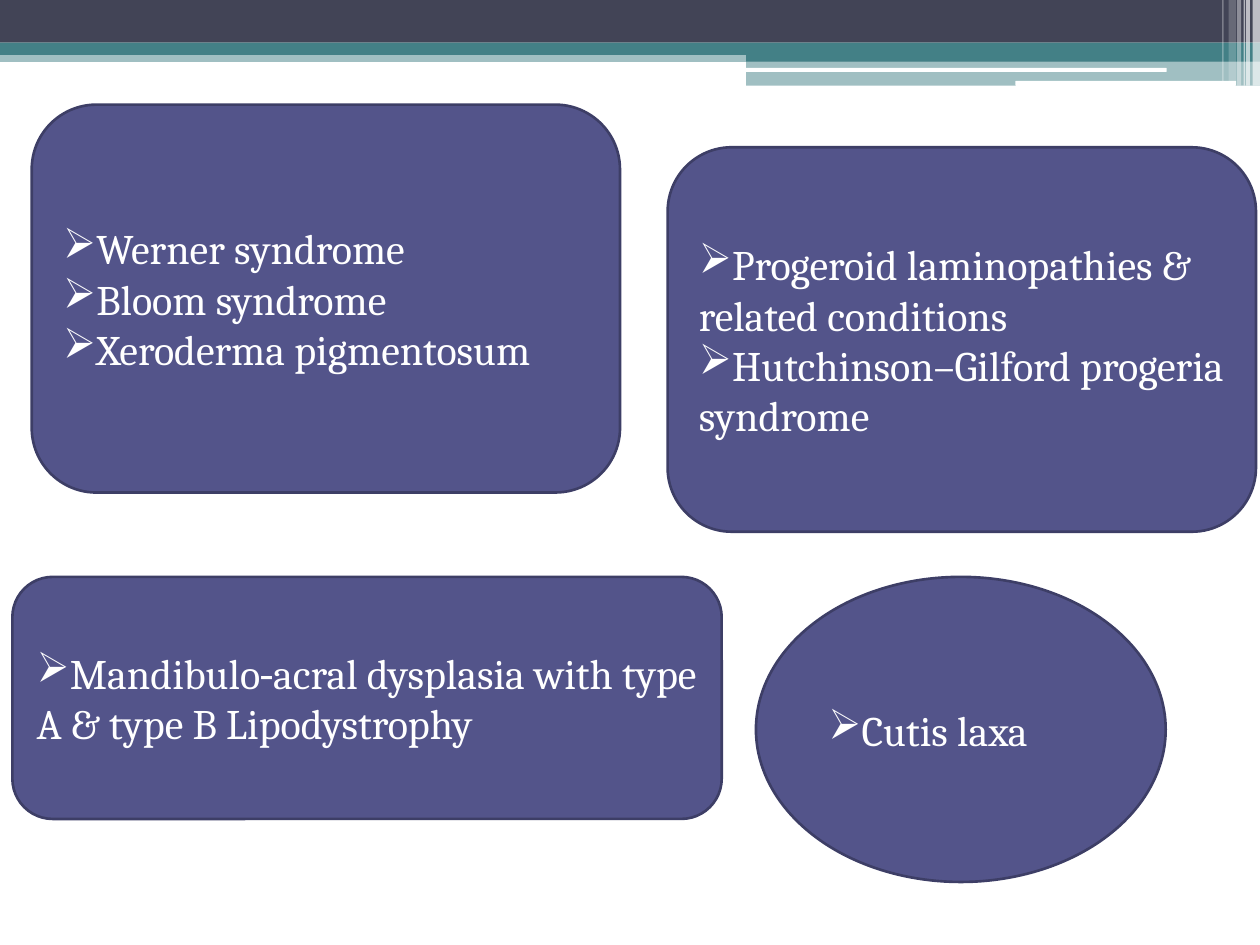
from lxml import etree
from pptx import Presentation
from pptx import util as u
from pptx.dml.color import RGBColor
from pptx.enum import shapes, text
from pptx.oxml import ns

TEAL = RGBColor(0x43, 0x80, 0x86)
SLATE = RGBColor(0x42, 0x44, 0x56)
WHITE = RGBColor(0xFF, 0xFF, 0xFF)
INDIGO = RGBColor(0x53, 0x54, 0x8A)
INDIGO_EDGE = RGBColor(0x3D, 0x3E, 0x66)

RECT = shapes.MSO_SHAPE.RECTANGLE
ROUNDED = shapes.MSO_SHAPE.ROUNDED_RECTANGLE
OVAL = shapes.MSO_SHAPE.OVAL
PAGE_WIDTH = 25.4


class SlideBuilder:
    """Holds the style and the current slide; all lengths are in cm."""

    font = "Cambria"
    size = u.Pt(24)
    bullet_char = "➢"

    def __init__(self, slide):
        self.slide = slide

    def block(self, kind, box, color, opacity=100):
        block = self.slide.shapes.add_shape(kind, *map(u.Cm, box))
        block.shadow.inherit = False
        block.fill.solid()
        block.fill.fore_color.rgb = color
        block.line.fill.background()
        if opacity < 100:
            tint = block.fill._xPr.find(".//" + ns.qn("a:srgbClr"))
            etree.SubElement(tint, ns.qn("a:alpha"), val=str(opacity * 1000))
        return block

    def bullet(self, paragraph):
        props = paragraph._p.get_or_add_pPr()
        props.set("marL", "0")
        props.set("indent", "0")
        etree.SubElement(props, ns.qn("a:buChar"), char=self.bullet_char)

    def bullet_card(self, kind, box, items):
        card = self.block(kind, box, INDIGO)
        card.line.color.rgb = INDIGO_EDGE
        card.line.width = u.Pt(1.5)
        frame = card.text_frame
        frame.word_wrap = True
        frame.vertical_anchor = text.MSO_ANCHOR.MIDDLE
        for index, item in enumerate(items):
            paragraph = frame.add_paragraph() if index else frame.paragraphs[0]
            paragraph.alignment = text.PP_ALIGN.LEFT
            self.bullet(paragraph)
            run = paragraph.add_run()
            run.text = item
            run.font.name = self.font
            run.font.size = self.size
            run.font.color.rgb = WHITE


def main():
    deck = Presentation()
    deck.slide_width, deck.slide_height = u.Cm(PAGE_WIDTH), u.Cm(19.05)
    builder = SlideBuilder(deck.slides.add_slide(deck.slide_layouts[6]))

    # Header bands
    step_left = 15.04
    step_width = PAGE_WIDTH - step_left
    builder.block(RECT, (0, 1.02, PAGE_WIDTH, 0.23), TEAL, 50)
    builder.block(RECT, (0, 0, PAGE_WIDTH, 0.86), SLATE)
    builder.block(RECT, (0, 0.86, PAGE_WIDTH, 0.25), TEAL)
    builder.block(RECT, (step_left, 0.99, step_width, 0.25), TEAL)
    builder.block(RECT, (step_left, 1.22, step_width, 0.51), TEAL, 50)

    # White slits in the bands
    for slit in ((15.01, 1.37, 8.51, 0.08), (20.47, 1.63, 4.45, 0.1)):
        builder.block(ROUNDED, slit, WHITE)

    # Translucent stripes at the right edge: left, width, height, opacity
    stripes = (
        (25.25, 0.15, 1.73, 65),
        (25.12, 0.08, 1.73, 65),
        (25.07, 0.03, 1.73, 60),
        (24.94, 0.08, 1.73, 40),
        (24.77, 0.15, 1.63, 20),
        (24.64, 0.03, 1.63, 30),
    )
    for left, width, height, opacity in stripes:
        builder.block(RECT, (left, 0, width, height), WHITE, opacity)

    # Syndrome groups
    builder.bullet_card(ROUNDED, (0.64, 2.11, 11.86, 7.82), (
        "Werner syndrome", "Bloom syndrome", "Xeroderma pigmentosum"))
    builder.bullet_card(ROUNDED, (13.46, 2.97, 11.86, 7.75), (
        "Progeroid laminopathies & related conditions",
        "Hutchinson–Gilford progeria syndrome"))
    builder.bullet_card(OVAL, (15.24, 11.63, 8.26, 6.15), ("Cutis laxa",))
    builder.bullet_card(ROUNDED, (0.25, 11.63, 14.3, 4.88), (
        "Mandibulo‐acral dysplasia with type A & type B Lipodystrophy",))

    deck.save("out.pptx")


if __name__ == "__main__":
    main()
